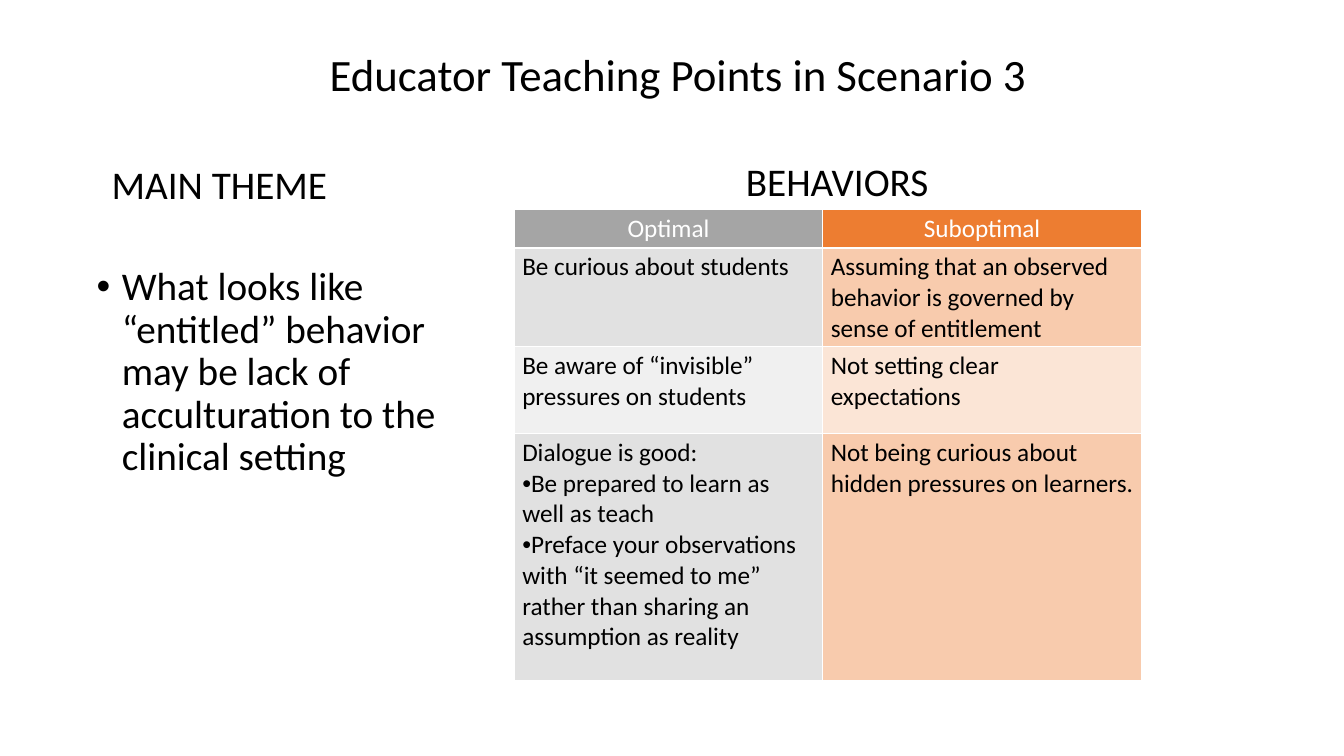
from lxml import etree
from pptx import Presentation
from pptx import util as u
from pptx.dml.color import RGBColor
from pptx.enum import text
from pptx.oxml import ns

FONT = "Calibri"
BLACK = RGBColor(0x00, 0x00, 0x00)
WHITE = RGBColor(0xFF, 0xFF, 0xFF)
GRAY = RGBColor(0xA5, 0xA5, 0xA5)
GRAY_MID = RGBColor(0xE1, 0xE1, 0xE1)
GRAY_PALE = RGBColor(0xF0, 0xF0, 0xF0)
ORANGE = RGBColor(0xED, 0x7D, 0x31)
ORANGE_MID = RGBColor(0xF8, 0xCB, 0xAD)
ORANGE_PALE = RGBColor(0xFB, 0xE5, 0xD6)

WIDTH, HEIGHT = u.Inches(13.33), u.Inches(7.5)
BULLET = "•"

# Table content; a leading bullet marks a bulleted paragraph
BEHAVIORS = [
    ("Optimal", "Suboptimal"),
    ("Be curious about students",
     "Assuming that an observed behavior is governed by sense of entitlement"),
    ("Be aware of “invisible” pressures on students",
     "Not setting clear expectations"),
    ("Dialogue is good:\n"
     "•Be prepared to learn as well as teach\n"
     "•Preface your observations with “it seemed to me” "
     "rather than sharing an assumption as reality",
     "Not being curious about hidden pressures on learners."),
]
HEADER_FILLS = (GRAY, ORANGE)
BAND_FILLS = ((GRAY_MID, ORANGE_MID), (GRAY_PALE, ORANGE_PALE))
COLUMN_SHARES = (22.96, 23.71)
ROW_SHARES = (4.67, 12, 11.47, 32.67)


def across(percent):
    return round(WIDTH * percent / 100)


def down(percent):
    return round(HEIGHT * percent / 100)


def place(left, top, width, height):
    """Turn percentages of the slide into a position and a size."""
    return across(left), down(top), across(width), down(height)


def add_bullet(para, indent=0):
    properties = para._p.get_or_add_pPr()
    properties.set("marL", str(u.Inches(indent)))
    properties.set("indent", str(-u.Inches(indent)))
    font = etree.SubElement(properties, ns.qn("a:buFont"))
    font.set("typeface", "Arial")
    etree.SubElement(properties, ns.qn("a:buChar")).set("char", BULLET)


def style_runs(para, size, color):
    for span in para.runs:
        span.font.name = FONT
        span.font.size = u.Pt(size)
        span.font.color.rgb = color


def add_text(page, area, words, size=28, align=text.PP_ALIGN.LEFT,
             anchor=text.MSO_ANCHOR.TOP, spacing=1.0, bullet_indent=None):
    frame = page.shapes.add_textbox(*place(*area)).text_frame
    frame.word_wrap = True
    frame.vertical_anchor = anchor
    para = frame.paragraphs[0]
    para.text = words
    para.alignment = align
    para.line_spacing = spacing
    if bullet_indent is not None:
        add_bullet(para, bullet_indent)
    style_runs(para, size, BLACK)


def add_borders(cell, color, points):
    properties = cell._tc.get_or_add_tcPr()
    for position, side in enumerate(("lnL", "lnR", "lnT", "lnB")):
        line = etree.Element(ns.qn(f"a:{side}"), w=str(u.Pt(points)))
        fill = etree.SubElement(line, ns.qn("a:solidFill"))
        etree.SubElement(fill, ns.qn("a:srgbClr")).set("val", str(color))
        properties.insert(position, line)


def fill_cell(cell, words, fill, is_header):
    cell.margin_left = cell.margin_right = u.Inches(0.08)
    cell.margin_top = cell.margin_bottom = u.Inches(0.04)
    cell.fill.solid()
    cell.fill.fore_color.rgb = fill
    add_borders(cell, WHITE, 1)
    cell.text_frame.text = words
    for para in cell.text_frame.paragraphs:
        if para.text.startswith(BULLET):
            para.text = para.text.removeprefix(BULLET)
            add_bullet(para)
        if is_header:
            para.alignment = text.PP_ALIGN.CENTER
        style_runs(para, 18, WHITE if is_header else BLACK)


def add_behavior_table(page, left, top):
    area = place(left, top, sum(COLUMN_SHARES), sum(ROW_SHARES))
    table = page.shapes.add_table(
        len(ROW_SHARES), len(COLUMN_SHARES), *area).table
    for column, share in zip(table.columns, COLUMN_SHARES):
        column.width = across(share)
    for index, (row, share) in enumerate(zip(table.rows, ROW_SHARES)):
        row.height = down(share)
        fills = BAND_FILLS[(index - 1) % 2] if index else HEADER_FILLS
        for cell, words, fill in zip(row.cells, BEHAVIORS[index], fills):
            fill_cell(cell, words, fill, is_header=index == 0)


def main():
    deck = Presentation()
    deck.slide_width, deck.slide_height = WIDTH, HEIGHT
    page = deck.slides.add_slide(deck.slide_layouts[6])

    # Title
    add_text(page, (16.43, 1.73, 68.04, 12.27),
             "Educator Teaching Points in Scenario 3", size=32,
             align=text.PP_ALIGN.CENTER, anchor=text.MSO_ANCHOR.BOTTOM,
             spacing=0.9)

    # Main theme
    add_text(page, (7.58, 20.53, 19.28, 7.6), "MAIN THEME")
    add_text(page, (6.45, 34.67, 26.93, 33.33),
             "What looks like “entitled” behavior may be lack of "
             "acculturation to the clinical setting",
             spacing=0.9, bullet_indent=0.25)

    # Behaviors
    add_text(page, (54.76, 20.13, 15.38, 7.6), "BEHAVIORS")
    add_behavior_table(page, 38.26, 27.73)

    deck.save("out.pptx")


if __name__ == "__main__":
    main()
